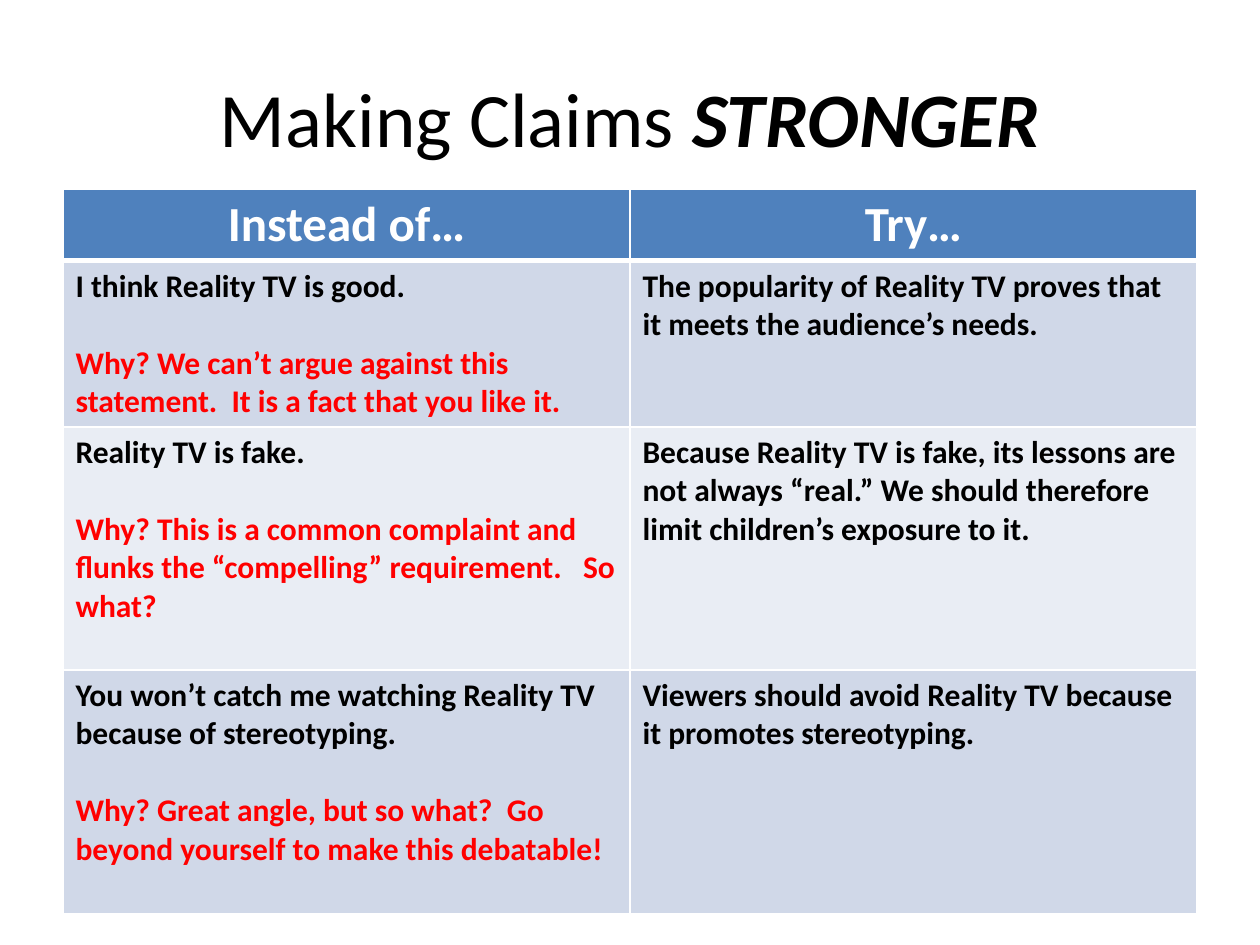
from lxml.etree import SubElement
from pptx import Presentation
from pptx.dml.color import RGBColor
from pptx.enum.text import MSO_ANCHOR, PP_ALIGN
from pptx.oxml.ns import qn
from pptx.util import Inches, Pt

FONT = "Calibri"
BLACK = RGBColor(0x00, 0x00, 0x00)
WHITE = RGBColor(0xFF, 0xFF, 0xFF)
RED = RGBColor(0xFF, 0x00, 0x00)
BLUE = RGBColor(0x4F, 0x81, 0xBD)
BAND_COLORS = [RGBColor(0xD0, 0xD8, 0xE8), RGBColor(0xE9, 0xED, 0xF4)]

HEADINGS = ["Instead of…", "Try…"]
CLAIMS = [
    (
        "I think Reality TV is good.",
        "Why? We can’t argue against this statement.  It is a fact that you like it.",
        "The popularity of Reality TV proves that it meets the audience’s needs.",
    ),
    (
        "Reality TV is fake.",
        "Why? This is a common complaint and flunks the “compelling” requirement.   So what?",
        "Because Reality TV is fake, its lessons are not always “real.” "
        "We should therefore limit children’s exposure to it.",
    ),
    (
        "You won’t catch me watching Reality TV because of stereotyping.",
        "Why? Great angle, but so what?  Go beyond yourself to make this debatable!",
        "Viewers should avoid Reality TV because it promotes stereotyping.",
    ),
]
ROW_HEIGHTS = [0.57, 1.32, 1.93, 1.93]


def add_text(paragraph, text, size=18, color=BLACK, bold=True, italic=False,
             align=PP_ALIGN.LEFT, space_before=0):
    paragraph.alignment = align
    paragraph.space_before = Pt(space_before)
    run = paragraph.add_run()
    run.text = text
    run.font.name = FONT
    run.font.size = Pt(size)
    run.font.color.rgb = color
    run.font.bold = bold
    run.font.italic = italic


def style_cell(cell, fill, bottom_width=1):
    properties = cell._tc.get_or_add_tcPr()
    for side, width in (("L", 1), ("R", 1), ("T", 1), ("B", bottom_width)):
        line = SubElement(properties, qn(f"a:ln{side}"), w=str(Pt(width)))
        SubElement(SubElement(line, qn("a:solidFill")), qn("a:srgbClr"), val=str(WHITE))
    cell.fill.solid()
    cell.fill.fore_color.rgb = fill


def add_title(slide, left, top, width, height):
    frame = slide.shapes.add_textbox(left, top, width, height).text_frame
    frame.word_wrap = True
    frame.vertical_anchor = MSO_ANCHOR.MIDDLE
    paragraph = frame.paragraphs[0]
    add_text(paragraph, "Making Claims ", size=44, bold=False, align=PP_ALIGN.CENTER)
    add_text(paragraph, "STRONGER", size=44, italic=True, align=PP_ALIGN.CENTER)


def add_claims_table(slide, left, top, width, height):
    table = slide.shapes.add_table(
        len(CLAIMS) + 1, len(HEADINGS), left, top, width, height
    ).table
    for row, row_height in zip(table.rows, ROW_HEIGHTS):
        row.height = Inches(row_height)

    for column, heading in enumerate(HEADINGS):
        cell = table.cell(0, column)
        style_cell(cell, BLUE, bottom_width=3)
        add_text(cell.text_frame.paragraphs[0], heading, size=28, color=WHITE,
                 align=PP_ALIGN.CENTER)

    for index, (weak_claim, reason, strong_claim) in enumerate(CLAIMS):
        weak_cell, strong_cell = table.rows[index + 1].cells
        for cell, claim in ((weak_cell, weak_claim), (strong_cell, strong_claim)):
            style_cell(cell, BAND_COLORS[index % 2])
            add_text(cell.text_frame.paragraphs[0], claim)
        add_text(weak_cell.text_frame.add_paragraph(), reason, color=RED, space_before=22)


def main():
    presentation = Presentation()
    presentation.slide_width = Inches(10)
    presentation.slide_height = Inches(7.5)
    slide = presentation.slides.add_slide(presentation.slide_layouts[6])
    add_title(slide, Inches(0.5), Inches(0.3), Inches(9), Inches(1.25))
    add_claims_table(slide, Inches(0.5), Inches(1.5), Inches(9), Inches(sum(ROW_HEIGHTS)))
    presentation.save("out.pptx")


if __name__ == "__main__":
    main()
